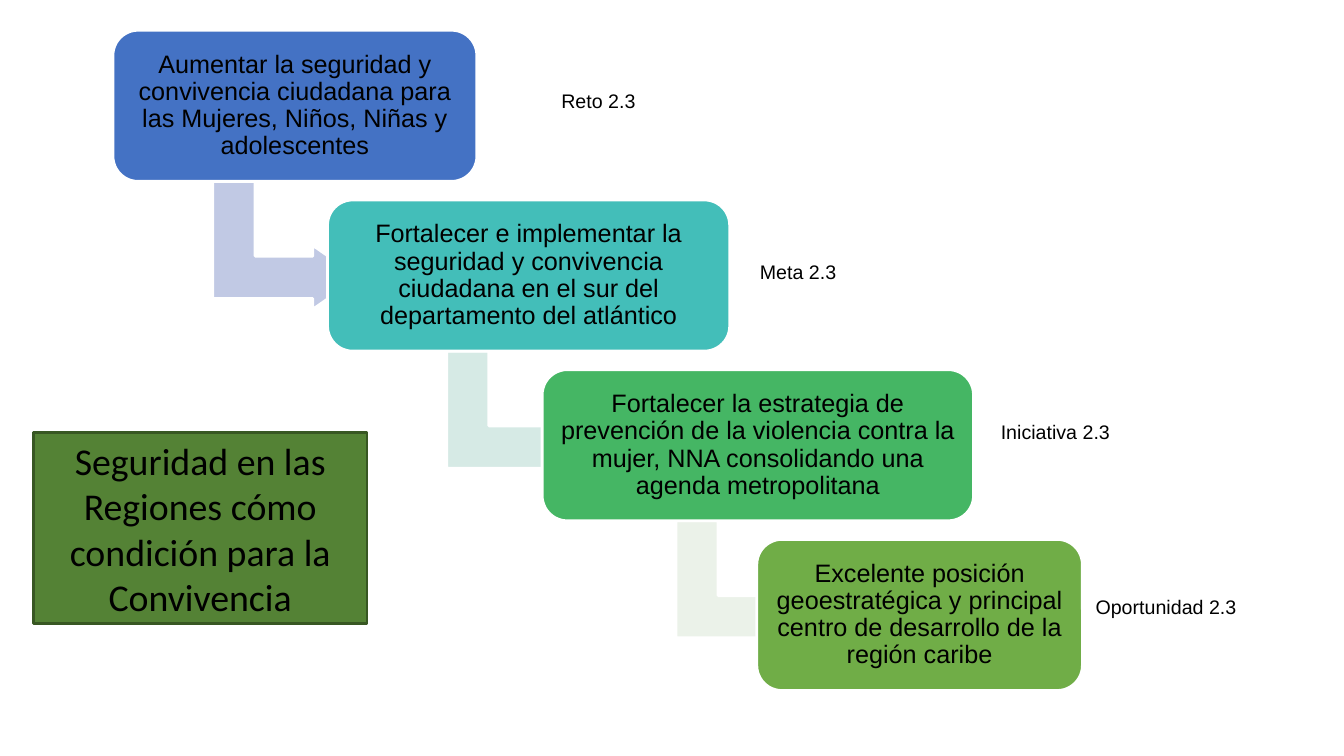
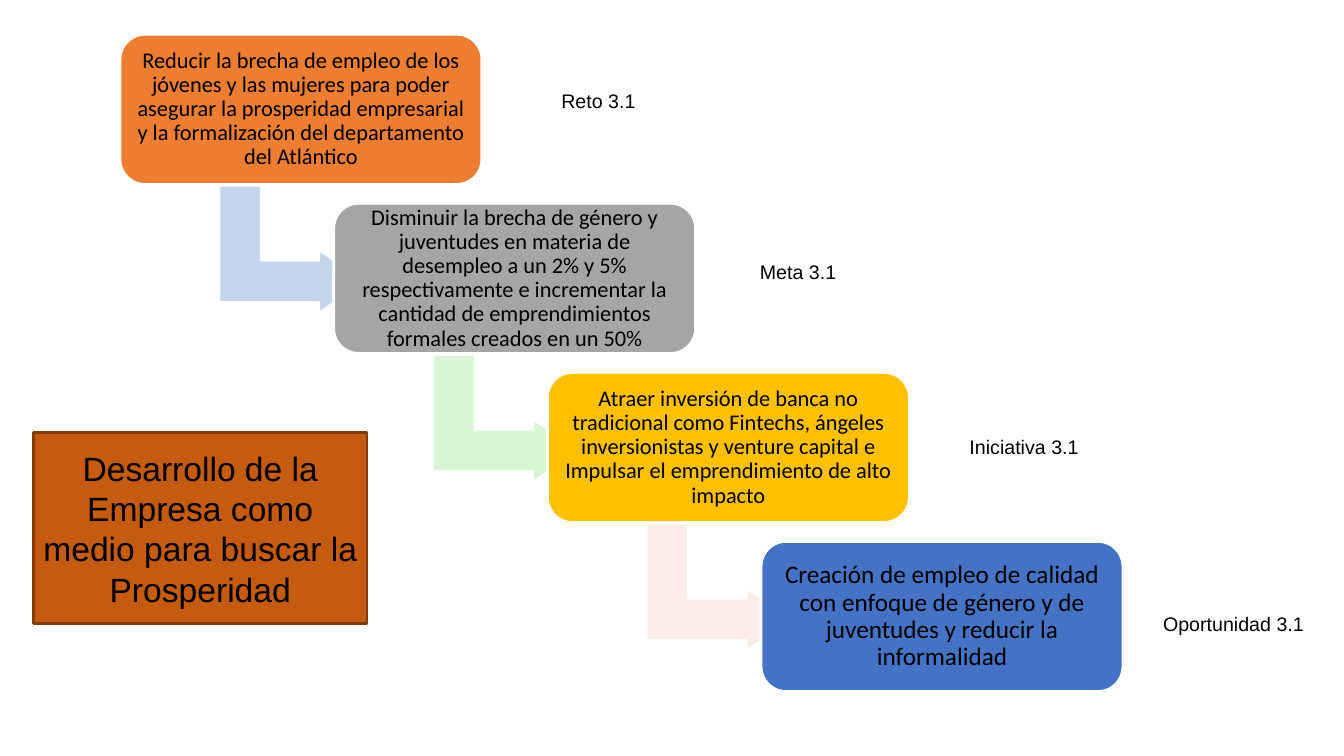
import pptx
import pptx.util
import pptx.dml.color
import pptx.enum.shapes
import pptx.enum.text
from dataclasses import dataclass

WIDTH = pptx.util.Inches(13.333)
HEIGHT = pptx.util.Inches(7.5)
SHAPES = pptx.enum.shapes.MSO_SHAPE
WHITE, BLACK = "FFFFFF", "000000"
CARD_INSET = 0.07

ARROW_SIZE = (9.53, 19.3)
ARROW_BACK, ARROW_DROP = 5.44, 18.8
ARROW_ADJUSTMENTS = (0.33, 0.25, 0.36)
THEME_FRAME = (2.48, 57.2, 24.83, 25.33)
LABEL_HEIGHT = 4.53
LABELS = (("Reto", 7.05), ("Meta", 7.2), ("Iniciativa", 9.68), ("Oportunidad", 12))
UPPER_LABELS = ((41.03, 11.07), (55.8, 33.73))


@dataclass
class Step:
    text: str
    fill: str
    width: float
    size: int
    arrow: str = ""


@dataclass
class Stairs:
    left: float
    top: float
    column: float
    row: float
    height: float
    font: str


@dataclass
class Theme:
    text: str
    fill: str
    border: str
    font: str
    size: int


def color(code):
    return pptx.dml.color.RGBColor.from_string(code)


def frame(left, top, width, height):
    return (int(WIDTH * left / 100), int(HEIGHT * top / 100),
            int(WIDTH * width / 100), int(HEIGHT * height / 100))


def add_run(paragraph, text, font, size):
    run = paragraph.add_run()
    run.text = text
    run.font.name = font
    run.font.size = pptx.util.Pt(size)
    run.font.color.rgb = color(BLACK)


def add_figure(slide, preset, place, fill, border):
    figure = slide.shapes.add_shape(preset, *frame(*place))
    figure.shadow.inherit = False
    figure.fill.solid()
    figure.fill.fore_color.rgb = color(fill)
    figure.line.color.rgb = color(border)
    figure.line.width = pptx.util.Pt(2)
    return figure


def write_centred(figure, text, font, size):
    body = figure.text_frame
    body.word_wrap = True
    body.vertical_anchor = pptx.enum.text.MSO_ANCHOR.MIDDLE
    paragraph = body.paragraphs[0]
    paragraph.alignment = pptx.enum.text.PP_ALIGN.CENTER
    add_run(paragraph, text, font, size)
    return body


def add_arrow(slide, left, top, fill):
    arrow = add_figure(slide, SHAPES.BENT_UP_ARROW, (left, top, *ARROW_SIZE), fill, WHITE)
    arrow.rotation = 90
    for index, value in enumerate(ARROW_ADJUSTMENTS):
        arrow.adjustments[index] = value


def add_card(slide, place, step, font):
    card = add_figure(slide, SHAPES.ROUNDED_RECTANGLE, place, step.fill, WHITE)
    body = write_centred(card, step.text, font, step.size)
    body.paragraphs[0].line_spacing = 0.9
    inset = pptx.util.Inches(CARD_INSET)
    body.margin_left = body.margin_right = inset
    body.margin_top = body.margin_bottom = inset


def add_stairs(slide, stairs, steps):
    for index, step in enumerate(steps):
        left = stairs.left + index * stairs.column
        top = stairs.top + index * stairs.row
        if step.arrow:
            add_arrow(slide, left + step.width / 2 - ARROW_BACK, top + ARROW_DROP, step.arrow)
        add_card(slide, (left, top, step.width, stairs.height), step, stairs.font)


def add_labels(slide, number, lower_labels):
    for (name, width), corner in zip(LABELS, UPPER_LABELS + lower_labels):
        label = slide.shapes.add_textbox(*frame(*corner, width, LABEL_HEIGHT))
        label.text_frame.word_wrap = False
        label.text_frame.auto_size = pptx.enum.text.MSO_AUTO_SIZE.SHAPE_TO_FIT_TEXT
        add_run(label.text_frame.paragraphs[0], f"{name} {number}", "Arial", 14)


def add_theme(slide, theme):
    box = add_figure(slide, SHAPES.RECTANGLE, THEME_FRAME, theme.fill, theme.border)
    write_centred(box, theme.text, theme.font, theme.size)


def add_plan(deck, number, lower_labels, stairs, steps, theme):
    slide = deck.slides.add_slide(deck.slide_layouts[6])
    add_stairs(slide, stairs, steps)
    add_labels(slide, number, lower_labels)
    add_theme(slide, theme)


def main():
    deck = pptx.Presentation()
    deck.slide_width, deck.slide_height = WIDTH, HEIGHT

    add_plan(
        deck, "2.3", ((73.73, 54.93), (80.78, 78)),
        Stairs(8.4, 4, 15.97, 22.45, 20, "Arial"),
        (
            Step("Aumentar la seguridad y convivencia ciudadana para las Mujeres, "
                 "Niños, Niñas y adolescentes", "4472C4", 27.08, 18, "C1C9E4"),
            Step("Fortalecer e implementar la seguridad y convivencia ciudadana "
                 "en el sur del departamento del atlántico", "43BEB9", 29.93, 18, "D6EAE5"),
            Step("Fortalecer la estrategia de prevención de la violencia contra la "
                 "mujer, NNA consolidando una agenda metropolitana",
                 "45B664", 32.1, 18, "EBF2E9"),
            Step("Excelente posición geoestratégica y principal centro de "
                 "desarrollo de la región caribe", "70AD47", 24.23, 18),
        ),
        Theme("Seguridad en las Regiones cómo condición para la Convivencia",
              "548235", "385723", "Calibri", 27),
    )

    add_plan(
        deck, "3.1", ((71.4, 56.93), (85.8, 80.27)),
        Stairs(8.93, 4.53, 15.9, 22.36, 19.87, "Calibri"),
        (
            Step("Reducir la brecha de empleo de los jóvenes y las mujeres para poder "
                 "asegurar la prosperidad empresarial y la formalización del "
                 "departamento del Atlántico", "ED7D31", 26.93, 16, "C4D5EB"),
            Step("Disminuir la brecha de género y juventudes en materia de desempleo "
                 "a un 2% y 5% respectivamente e incrementar la cantidad de "
                 "emprendimientos formales creados en un 50%",
                 "A5A5A5", 26.93, 16, "D8F5D4"),
            Step("Atraer inversión de banca no tradicional como Fintechs, ángeles "
                 "inversionistas y venture capital e Impulsar el emprendimiento de "
                 "alto impacto", "FFC000", 26.93, 16, "FCECE8"),
            Step("Creación de empleo de calidad con enfoque de género y de juventudes "
                 "y reducir la informalidad", "4472C4", 26.93, 18),
        ),
        Theme("Desarrollo de la Empresa como medio para buscar la Prosperidad",
              "C55A11", "843C0B", "Arial", 24),
    )

    deck.save("out.pptx")


if __name__ == "__main__":
    main()
